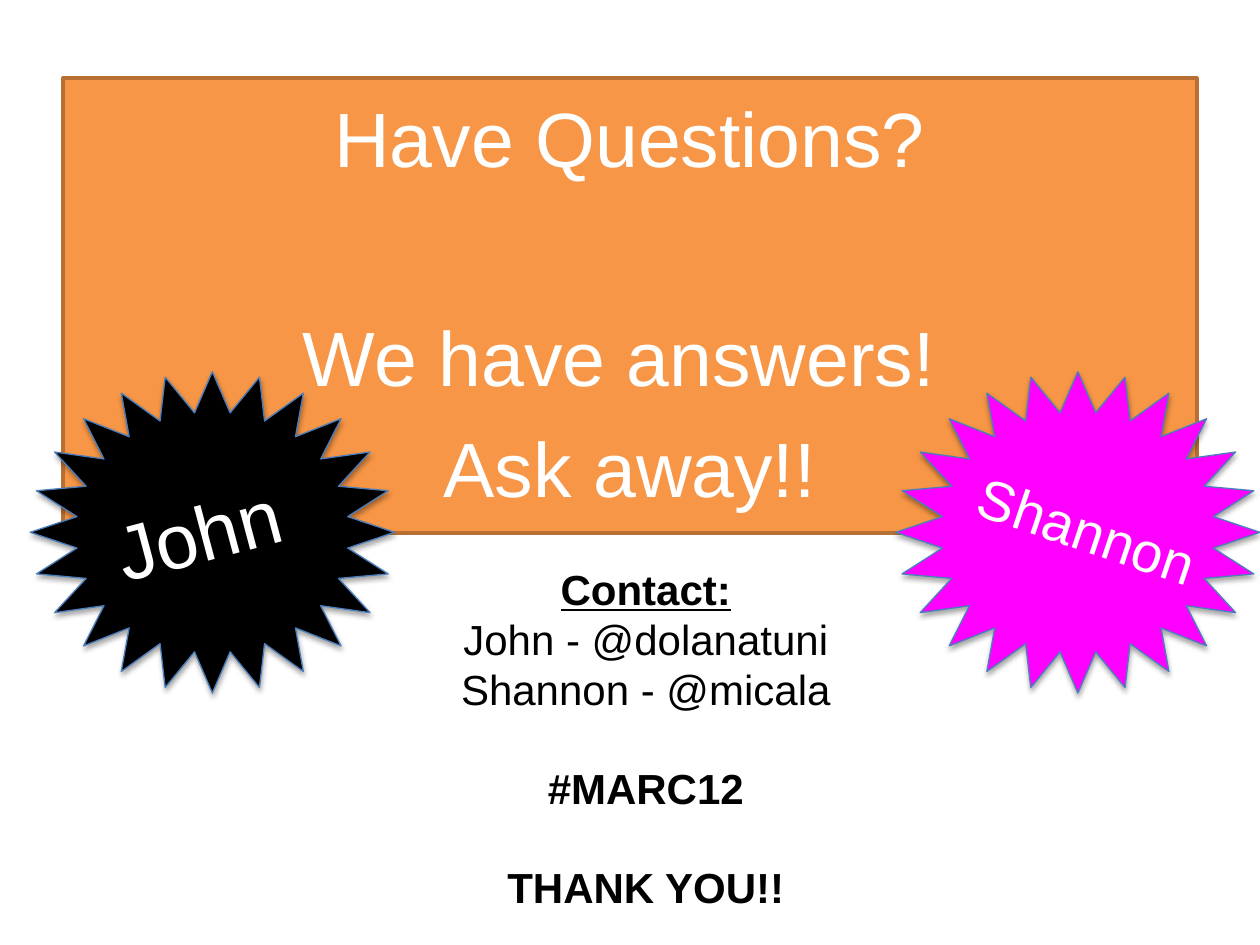
from dataclasses import dataclass

from lxml.etree import SubElement
from pptx import Presentation
from pptx.dml.color import RGBColor
from pptx.enum.shapes import MSO_SHAPE
from pptx.enum.text import MSO_ANCHOR, MSO_AUTO_SIZE, PP_ALIGN
from pptx.oxml.ns import qn
from pptx.util import Inches, Pt


@dataclass(frozen=True)
class Theme:
    font: str = "Arial"
    white: str = "FFFFFF"
    black: str = "000000"
    orange: str = "F79646"
    brown: str = "B76F34"
    magenta: str = "FF00FF"
    blue: str = "4B7EBC"
    large: int = 44
    medium: int = 32
    small: int = 24


class SlideBuilder:
    def __init__(self, page, theme):
        self.page = page
        self.theme = theme

    def place(self, shape, left, top, width, height):
        shape.left, shape.top = Inches(left), Inches(top)
        shape.width, shape.height = Inches(width), Inches(height)

    def paint(self, shape, fill, line, weight):
        shape.fill.solid()
        shape.fill.fore_color.rgb = RGBColor.from_string(fill)
        shape.line.color.rgb = RGBColor.from_string(line)
        shape.line.width = Pt(weight)

    def add_span(self, para, text, size, color, bold=False, underline=False):
        span = para.add_run()
        span.text = text
        span.font.name = self.theme.font
        span.font.size = Pt(size)
        span.font.color.rgb = RGBColor.from_string(color)
        span.font.bold = bold
        span.font.underline = underline

    def paragraph(self, frame, index, space, align=PP_ALIGN.CENTER):
        para = frame.add_paragraph() if index else frame.paragraphs[0]
        para.alignment = align
        para.space_before = Pt(space)
        return para

    def panel(self, bounds, lines):
        box = self.page.placeholders[1]
        self.place(box, *bounds)
        self.paint(box, self.theme.orange, self.theme.brown, 2)
        frame = box.text_frame
        frame.auto_size = MSO_AUTO_SIZE.NONE
        frame.vertical_anchor = MSO_ANCHOR.TOP
        frame.margin_top = Inches(0.1)
        for index, (text, space) in enumerate(lines):
            para = self.paragraph(frame, index, space)
            properties = para._p.get_or_add_pPr()
            properties.set("marL", "0")
            properties.set("indent", "0")
            SubElement(properties, qn("a:buNone"))
            self.add_span(para, text, self.theme.large, self.theme.white)

    def star(self, left, fill):
        star = self.page.shapes.add_shape(
            MSO_SHAPE.STAR_24_POINT,
            Inches(left), Inches(2.95), Inches(2.89), Inches(2.55))
        self.paint(star, fill, self.theme.blue, 0.75)
        star.shadow.inherit = False
        effects = star._element.spPr.find(qn("a:effectLst"))
        shadow = SubElement(
            effects, qn("a:outerShdw"), blurRad=str(Pt(3.1)),
            dist=str(Pt(1.8)), dir="5400000", rotWithShape="0")
        color = SubElement(shadow, qn("a:srgbClr"), val=self.theme.black)
        SubElement(color, qn("a:alpha"), val="35000")

    def text_box(self, bounds, wrap=True):
        box = self.page.shapes.add_textbox(*map(Inches, bounds))
        box.text_frame.word_wrap = wrap
        box.text_frame.auto_size = MSO_AUTO_SIZE.SHAPE_TO_FIT_TEXT
        return box

    def name(self, text, bounds, rotation, size, wrap):
        box = self.text_box(bounds, wrap)
        box.rotation = rotation
        para = self.paragraph(box.text_frame, 0, 0, PP_ALIGN.LEFT)
        self.add_span(para, text, size, self.theme.white)

    def contact(self, bounds, lines):
        frame = self.text_box(bounds).text_frame
        for index, (text, space, bold, underline) in enumerate(lines):
            para = self.paragraph(frame, index, space)
            self.add_span(para, text, self.theme.small, self.theme.black,
                          bold, underline)


def main():
    theme = Theme()
    deck = Presentation()
    deck.slide_width, deck.slide_height = Inches(10), Inches(7.5)
    page = deck.slides.add_slide(deck.slide_layouts[1])
    title = page.shapes.title._element
    title.getparent().remove(title)

    builder = SlideBuilder(page, theme)
    builder.panel((0.5, 0.62, 9, 3.61), [
        ("Have Questions?", 0),
        ("We have answers! ", 72),
        ("Ask away!!", 10.8),
    ])
    builder.star(0.24, theme.black)
    builder.star(7.11, theme.magenta)
    builder.name("John", (0.81, 3.8, 1.55, 0.84), 345, theme.large, True)
    builder.name("Shannon", (7.64, 3.89, 2, 0.64), 18.7, theme.medium, False)
    builder.contact((3.25, 4.42, 3.75, 2.93), [
        ("Contact:", 0, True, True),
        ("John - @dolanatuni", 0, False, False),
        ("Shannon - @micala", 0, False, False),
        ("#MARC12", 27.6, True, False),
        ("THANK YOU!!", 27.6, True, False),
    ])
    deck.save("out.pptx")


if __name__ == "__main__":
    main()
